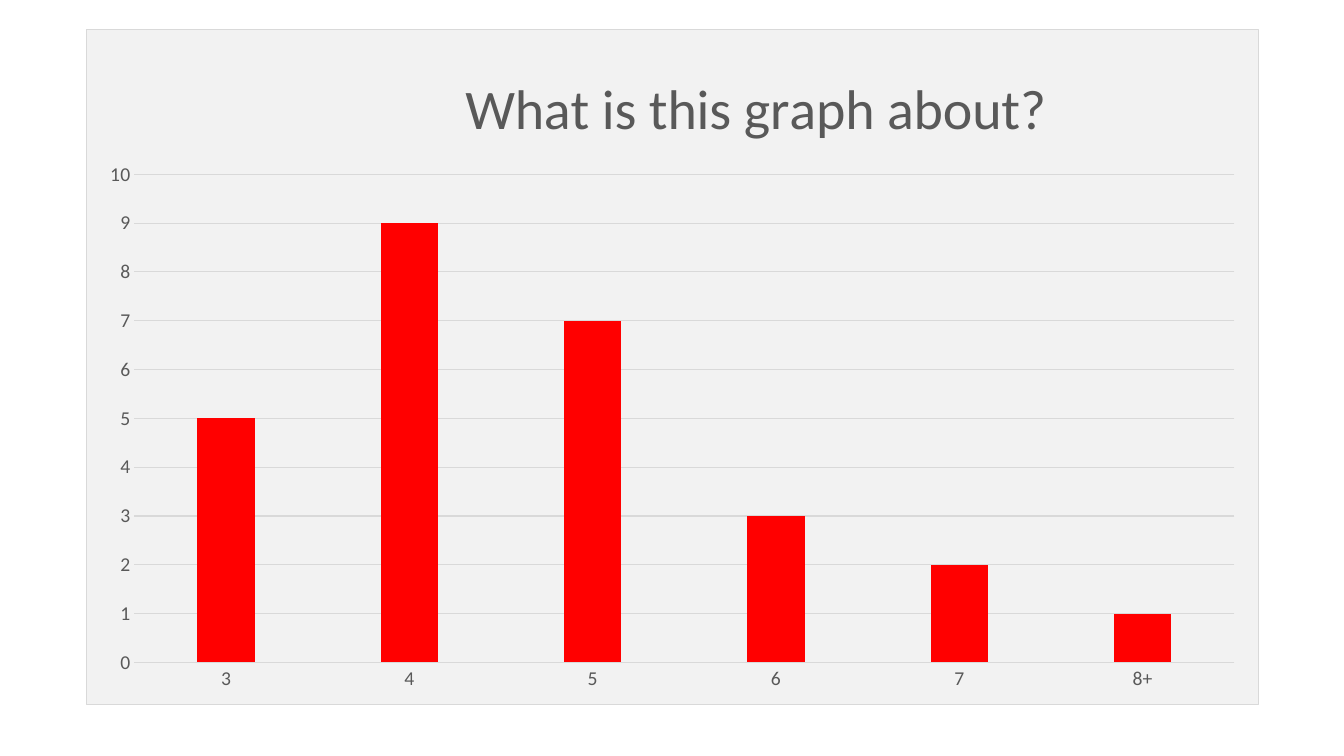
"""Build a slide with one column chart of counts from 3 to 8+."""
from typing import NamedTuple

from lxml import etree
from pptx import Presentation
from pptx.chart.data import CategoryChartData
from pptx.dml.color import RGBColor
from pptx.enum import chart as chart_enum
from pptx.oxml import parse_xml
from pptx.oxml.ns import nsdecls, qn
from pptx.util import Emu, Pt

EMU_PER_PX = 914400 / 100.8
FONT = "Calibri"
TEXT_GREY, LINE_GREY, PANEL_GREY, RED = "595959", "D9D9D9", "F2F2F2", "FF0000"
COUNTS = {"3": 5, "4": 9, "5": 7, "6": 3, "7": 2, "8+": 1}


class Box(NamedTuple):
    """Hold a rectangle in px."""

    left: int
    top: int
    width: int
    height: int


SLIDE = Box(0, 0, 1344, 756)
PANEL = Box(86, 29, 1173, 676)
PLOT = Box(134, 174, 1101, 489)
TITLE = Box(455, 60, 578, 64)


def px(length: int) -> Emu:
    """Turn px into EMU."""
    return Emu(round(length * EMU_PER_PX))


def rgb(colour: str) -> RGBColor:
    """Turn a hex string into a colour."""
    return RGBColor.from_string(colour)


def style_font(font, size: int, colour: str) -> None:
    """Set typeface, size and colour."""
    font.name = FONT
    font.size = Pt(size)
    font.bold = False
    font.color.rgb = rgb(colour)


def style_line(line) -> None:
    """Draw a thin grey line."""
    line.color.rgb = rgb(LINE_GREY)
    line.width = Pt(0.75)


def place(element, box: Box, sized: bool) -> None:
    """Fix a chart part at a box, as fractions of the panel."""
    for old in element.findall(qn("c:layout")):
        element.remove(old)
    layout = etree.Element(qn("c:layout"))
    manual = etree.SubElement(layout, qn("c:manualLayout"))
    settings = {"layoutTarget": "inner"} if sized else {}
    settings |= {"xMode": "edge", "yMode": "edge"}
    settings["x"] = f"{(box.left - PANEL.left) / PANEL.width:.4f}"
    settings["y"] = f"{(box.top - PANEL.top) / PANEL.height:.4f}"
    if sized:
        settings["w"] = f"{box.width / PANEL.width:.4f}"
        settings["h"] = f"{box.height / PANEL.height:.4f}"
    for tag, value in settings.items():
        etree.SubElement(manual, qn(f"c:{tag}")).set("val", value)
    text = element.find(qn("c:tx"))
    if text is None:
        element.insert(0, layout)
    else:
        text.addnext(layout)


def fill_panel(chart) -> None:
    """Give the chart area its fill and border."""
    panel = parse_xml(
        f'<c:spPr {nsdecls("c", "a")}>'
        f'<a:solidFill><a:srgbClr val="{PANEL_GREY}"/></a:solidFill>'
        f'<a:ln w="{Pt(0.75)}"><a:solidFill><a:srgbClr val="{LINE_GREY}"/>'
        "</a:solidFill></a:ln></c:spPr>"
    )
    chart.element.find(qn("c:chart")).addnext(panel)


def style_axes(chart) -> None:
    """Style both axes and the gridlines."""
    categories, values = chart.category_axis, chart.value_axis
    for axis in (categories, values):
        axis.major_tick_mark = chart_enum.XL_TICK_MARK.NONE
        axis.minor_tick_mark = chart_enum.XL_TICK_MARK.NONE
        style_font(axis.tick_labels.font, 14, TEXT_GREY)
    style_line(categories.format.line)
    values.format.line.fill.background()
    values.minimum_scale, values.maximum_scale, values.major_unit = 0, 10, 1
    values.has_major_gridlines = True
    style_line(values.major_gridlines.format.line)


def add_counts(slide) -> None:
    """Add the column chart with its title."""
    data = CategoryChartData()
    data.categories = list(COUNTS)
    data.add_series("Series 1", list(COUNTS.values()))
    kind = chart_enum.XL_CHART_TYPE.COLUMN_CLUSTERED
    chart = slide.shapes.add_chart(kind, *map(px, PANEL), data).chart
    style_font(chart.font, 10, "000000")
    chart.has_legend = False

    heading = chart.chart_title.text_frame.paragraphs[0].add_run()
    heading.text = "What is this graph about?"
    style_font(heading.font, 40, TEXT_GREY)
    chart.chart_title.include_in_layout = False

    columns = chart.plots[0]
    columns.gap_width, columns.overlap = 219, -27
    columns.vary_by_categories = False
    columns.series[0].format.fill.solid()
    columns.series[0].format.fill.fore_color.rgb = rgb(RED)

    style_axes(chart)
    fill_panel(chart)
    chart_part = chart.element.find(qn("c:chart"))
    place(chart_part.find(qn("c:title")), TITLE, sized=False)
    place(chart_part.find(qn("c:plotArea")), PLOT, sized=True)


def main() -> None:
    """Build and save the slide."""
    deck = Presentation()
    deck.slide_width, deck.slide_height = px(SLIDE.width), px(SLIDE.height)
    add_counts(deck.slides.add_slide(deck.slide_layouts[6]))
    deck.save("out.pptx")


if __name__ == "__main__":
    main()
